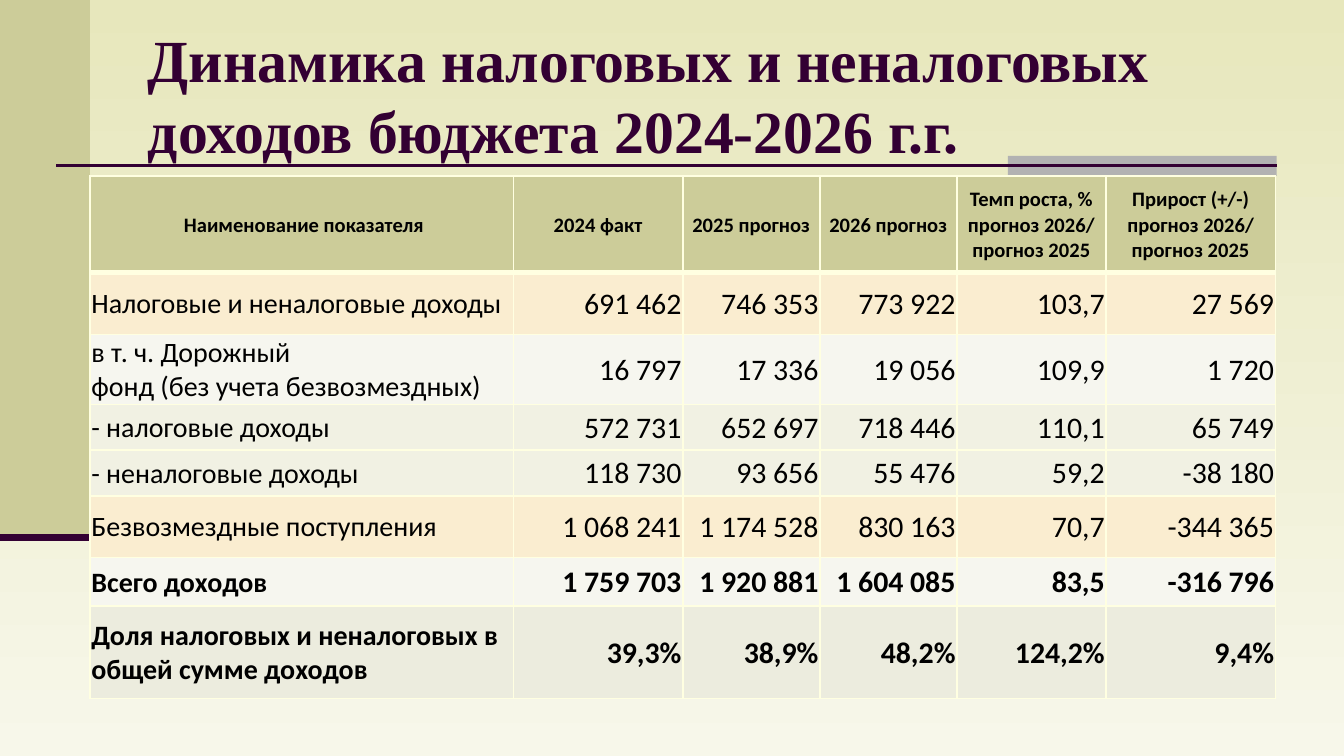
from lxml import etree
from pptx import Presentation
from pptx import util as u
from pptx.dml.color import RGBColor
from pptx.enum import shapes, text
from pptx.oxml import ns

HUES = {
    "top": "E7E7BC", "base": "F7F7EA", "olive": "CCCC99", "gray": "B2B2B2",
    "plum": "330033", "edge": "FFFFE1", "ink": "000000", "cream": "FAEDD0",
    "pale": "F6F6EF", "sage": "F1F1E3", "dusk": "ECECDE",
}
COLS = [3.15, 1.26, 1.02, 1.02, 1.11, 1.26]
HEAD = [" Наименование показателя", "2024 факт", "2025 прогноз", "2026 прогноз",
        "Темп роста, %\vпрогноз 2026/ прогноз 2025",
        "Прирост (+/-) прогноз 2026/ прогноз 2025"]
ROWS = [
    (0.72, "olive", True, HEAD),
    (0.46, "cream", False, ["Налоговые и неналоговые доходы",
                            "691 462", "746 353", "773 922", "103,7", "27 569"]),
    (0.5, "pale", False, ["в т. ч. Дорожный\nфонд (без учета безвозмездных)",
                          "16 797", "17 336", "19 056", "109,9", "1 720"]),
    (0.34, "sage", False, ["- налоговые доходы",
                           "572 731", "652 697", "718 446", "110,1", "65 749"]),
    (0.34, "sage", False, ["- неналоговые доходы",
                           "118 730", "93 656", "55 476", "59,2", "-38 180"]),
    (0.46, "cream", False, ["Безвозмездные поступления",
                            "1 068 241", "1 174 528", "830 163", "70,7", "-344 365"]),
    (0.36, "pale", True, ["Всего доходов",
                          "1 759 703", "1 920 881", "1 604 085", "83,5", "-316 796"]),
    (0.69, "dusk", True, ["Доля налоговых и неналоговых в общей сумме доходов",
                          "39,3%", "38,9%", "48,2%", "124,2%", "9,4%"]),
]


def hue(name):
    return RGBColor.from_string(HUES[name])


def write(par, words, face, size, bold, tint):
    for n, line in enumerate(words.split("\v")):
        if n:
            par.add_line_break()
        run = par.add_run()
        run.text = line
        run.font.name = face
        run.font.size = u.Pt(size)
        run.font.bold = bold
        run.font.color.rgb = hue(tint)


deck = Presentation()
deck.slide_width = u.Inches(10)
deck.slide_height = deck.slide_width * 9 // 16
slide = deck.slides.add_slide(deck.slide_layouts[5])
back = slide.background.fill
back.gradient()
back.gradient_angle = 270
for stop, name in zip(back.gradient_stops, ("top", "base")):
    stop.color.rgb = hue(name)

for x, y, w, h, name in [(0, 0, 0.67, 4, "olive"), (7.5, 1.16, 2, 0.15, "gray")]:
    bar = slide.shapes.add_shape(shapes.MSO_SHAPE.RECTANGLE, *map(u.Inches, (x, y, w, h)))
    bar.shadow.inherit = False
    bar.fill.solid()
    bar.fill.fore_color.rgb = hue(name)
    bar.line.fill.background()

for x, end, y, wide in [(0.42, 9.5, 1.23, 1.5), (0, 0.67, 4, 3.5)]:
    rule = slide.shapes.add_connector(shapes.MSO_CONNECTOR.STRAIGHT,
                                      *map(u.Inches, (x, y, end, y)))
    rule.line.color.rgb = hue("plum")
    rule.line.width = u.Pt(wide)
    etree.SubElement(rule.element.spPr, ns.qn("a:effectLst"))

title = slide.shapes.title
title.element.getparent().append(title.element)
title.left, title.top, title.width, title.height = map(u.Inches, (1, 0.23, 8.5, 0.94))
frame = title.text_frame
frame.word_wrap = True
frame.auto_size = text.MSO_AUTO_SIZE.NONE
frame.vertical_anchor = text.MSO_ANCHOR.MIDDLE
frame.paragraphs[0].alignment = text.PP_ALIGN.LEFT
write(frame.paragraphs[0], "Динамика налоговых и неналоговых доходов бюджета 2024-2026 г.г.",
      "Times New Roman", 32, True, "plum")

high = sum(row[0] for row in ROWS)
grid = slide.shapes.add_table(len(ROWS), len(COLS),
                              *map(u.Inches, (0.67, 1.31, sum(COLS), high))).table
for col, wide in zip(grid.columns, COLS):
    col.width = u.Inches(wide)

for r, (tall, fill, bold, words) in enumerate(ROWS):
    grid.rows[r].height = u.Inches(tall)
    for c, word in enumerate(words):
        cell = grid.cell(r, c)
        cell.margin_left = cell.margin_right = cell.margin_top = u.Inches(0.01)
        cell.margin_bottom = 0
        cell.vertical_anchor = text.MSO_ANCHOR.MIDDLE
        props = cell._tc.get_or_add_tcPr()
        for side in "LRTB":
            thick = 3 if (r, side) in ((0, "B"), (1, "T")) else 1
            edge = etree.SubElement(props, ns.qn("a:ln" + side), w=str(u.Pt(thick)))
            paint = etree.SubElement(edge, ns.qn("a:solidFill"))
            etree.SubElement(paint, ns.qn("a:srgbClr"), val=HUES["edge"])
        cell.fill.solid()
        cell.fill.fore_color.rgb = hue(fill)
        if r == 0:
            size, side = 11, text.PP_ALIGN.CENTER
        elif c == 0:
            size, side = 15, text.PP_ALIGN.LEFT
        else:
            size, side = 16, text.PP_ALIGN.RIGHT
        for n, line in enumerate(word.split("\n")):
            par = cell.text_frame.add_paragraph() if n else cell.text_frame.paragraphs[0]
            par.alignment = side
            write(par, line, "Calibri", size, bold, "ink")

deck.save("out.pptx")
